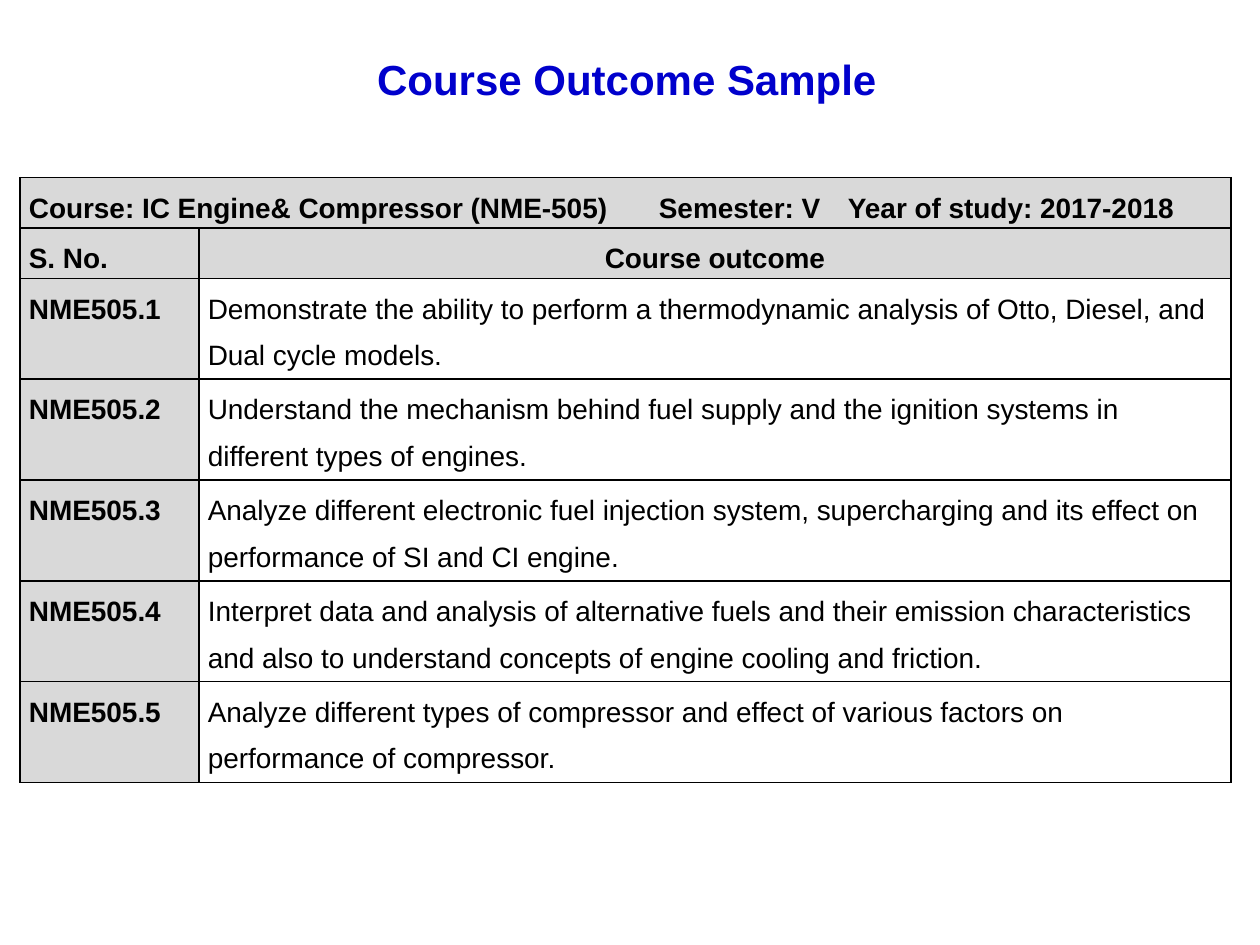
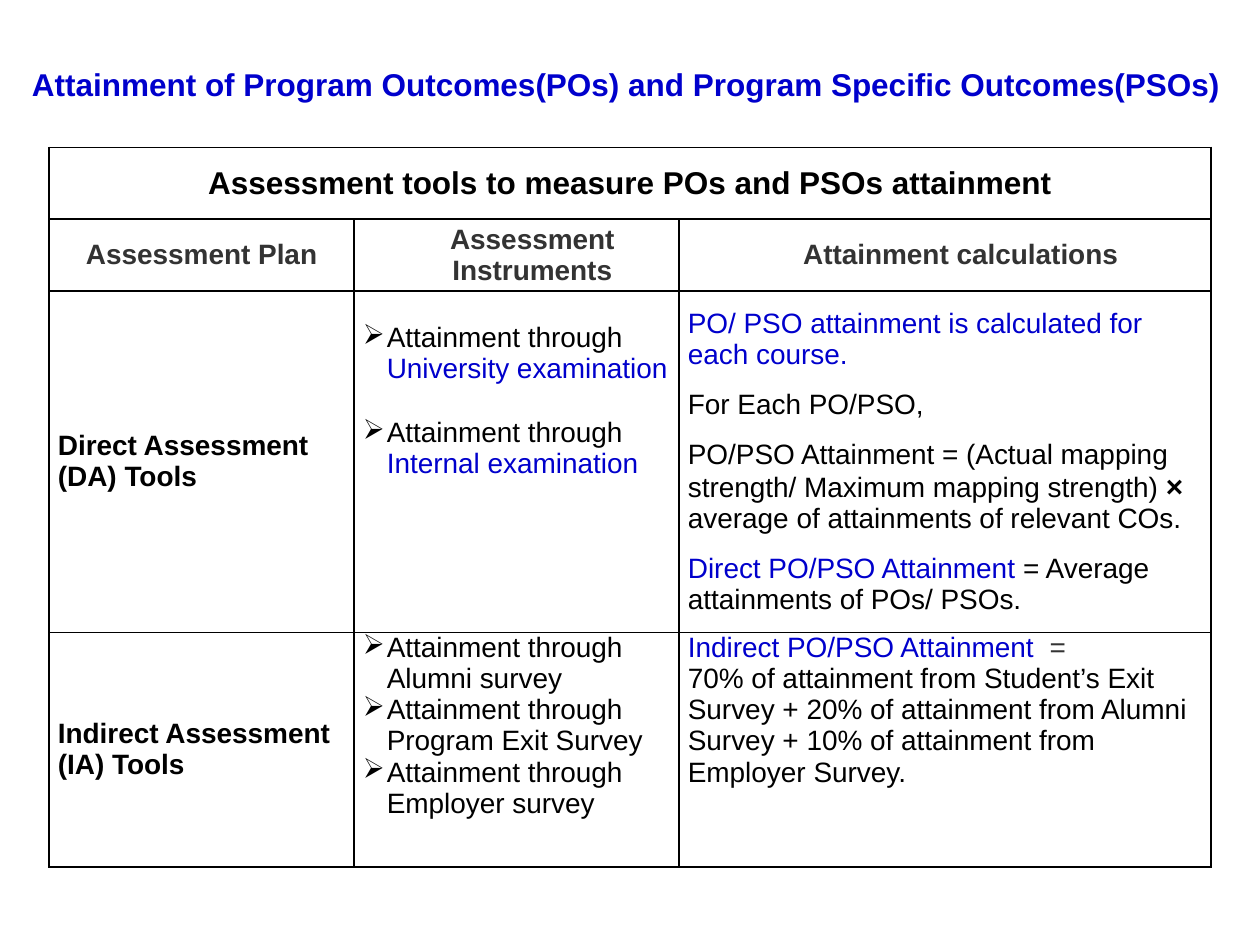
from lxml import etree
from pptx import Presentation
from pptx import util as u
from pptx.dml.color import RGBColor
from pptx.enum import text
from pptx.oxml import ns

BLUE, BLACK, CHARCOAL, GREY = "0000CC", "000000", "333333", "D9D9D9"
WIDTH, HEIGHT = u.Inches(10), u.Inches(7.5)
BODY = {"name": "Arial", "size": u.Pt(16), "bold": False}
CENTER = {"alignment": text.PP_ALIGN.CENTER}
MIDDLE = text.MSO_ANCHOR.MIDDLE
TOP = text.MSO_ANCHOR.TOP


def color(value):
    return RGBColor.from_string(value)


def area(left, top, width, height):
    """Turn percentages of the slide's size into lengths."""
    return [round(side * share / 100) for side, share in
            zip((WIDTH, HEIGHT, WIDTH, HEIGHT), (left, top, width, height))]


def set_attributes(target, values):
    for name, value in values.items():
        setattr(target, name, value)


def sub(parent, tag, **attributes):
    return etree.SubElement(parent, ns.qn(tag), attributes)


# Text: a run is (words, colour, format); a paragraph is (runs, options)
def run(words, ink=BLACK, **changes):
    return words, ink, changes


def write_paragraph(paragraph, runs, bullet=None, indent=0, hanging=0,
                    tabs=(), **layout):
    properties = paragraph._p.get_or_add_pPr()
    properties.set("marL", str(u.Inches(indent)))
    properties.set("indent", str(-u.Inches(hanging)))
    if bullet:
        sub(properties, "a:buChar", char=bullet)
    if tabs:
        stops = sub(properties, "a:tabLst")
        for position in tabs:
            sub(stops, "a:tab", pos=str(u.Inches(position)), algn="l")
    set_attributes(paragraph, layout)
    for words, ink, changes in runs:
        piece = paragraph.add_run()
        piece.text = words
        set_attributes(piece.font, {**BODY, **changes})
        piece.font.color.rgb = color(ink)


def add_title(slide, words, size, box):
    title = slide.shapes.title
    set_attributes(title, dict(zip(("left", "top", "width", "height"), area(*box))))
    set_attributes(title.text_frame, {"word_wrap": True, "vertical_anchor": MIDDLE,
                                      "auto_size": text.MSO_AUTO_SIZE.NONE,
                                      "margin_top": 0, "margin_bottom": 0})
    write_paragraph(title.text_frame.paragraphs[0],
                    [run(words, BLUE, size=u.Pt(size), bold=True)], **CENTER)


# Tables
def add_borders(cell):
    properties = cell._tc.get_or_add_tcPr()
    for side in ("a:lnL", "a:lnR", "a:lnT", "a:lnB"):
        line = sub(properties, side, w=str(u.Pt(1)))
        sub(sub(line, "a:solidFill"), "a:srgbClr", val=BLACK)


def add_table(slide, box, columns, rows):
    """Add a bordered table whose first row is one wide cell."""
    frame = slide.shapes.add_table(len(rows), len(columns), *area(*box))
    table = frame.table
    set_attributes(table, {"first_row": False, "horz_banding": False})
    for column, width in zip(table.columns, columns):
        column.width = u.Inches(width)
    for row, height in zip(table.rows, rows):
        row.height = u.Inches(height)
    for cell in table.iter_cells():
        add_borders(cell)
        cell.fill.background()
    table.cell(0, 0).merge(table.cell(0, len(columns) - 1))
    return table


def fill_cell(cell, *paragraphs, fill=None, anchor=TOP, top=0):
    set_attributes(cell, {"margin_left": u.Inches(0.07), "margin_right": u.Inches(0.07),
                          "margin_top": u.Inches(top), "margin_bottom": 0,
                          "vertical_anchor": anchor})
    if fill:
        cell.fill.solid()
        cell.fill.fore_color.rgb = color(fill)
    frame = cell.text_frame
    for index, (runs, options) in enumerate(paragraphs):
        paragraph = frame.add_paragraph() if index else frame.paragraphs[0]
        write_paragraph(paragraph, runs, **options)


def bold_line(words, ink=BLACK, size=16, **options):
    return [run(words, ink, size=u.Pt(size), bold=True)], options


def arrow_item(*runs, **options):
    return runs, {"bullet": "➢", "indent": 0.19, "hanging": 0.19, **options}


# Slides
def build_course_outcomes(slide):
    outcomes = (
        "Demonstrate the ability to perform a thermodynamic analysis of Otto, "
        "Diesel, and Dual cycle models.",
        "Understand the mechanism behind fuel supply and the ignition systems in "
        "different types of engines.",
        "Analyze different electronic fuel injection system, supercharging and its "
        "effect on performance of SI and CI engine.",
        "Interpret data and analysis of alternative fuels and their emission "
        "characteristics and also to understand concepts of engine cooling and friction.",
        "Analyze different types of compressor and effect of various factors on "
        "performance of compressor.",
    )
    spacing = {"line_spacing": 1.5}
    table = add_table(slide, (1.6, 18.8, 96.1, 64), (1.42, 8.19),
                      [0.4] * 2 + [0.8] * len(outcomes))
    add_title(slide, "Course Outcome Sample", 24, (4.5, 4.13, 90.5, 8.4))

    course = "Course: IC Engine& Compressor (NME-505)\tSemester: V\tYear of study: 2017-2018"
    fill_cell(table.cell(0, 0), bold_line(course, tabs=(4.9, 6.55), **spacing), fill=GREY)
    fill_cell(table.cell(1, 0), bold_line("S. No.", **spacing), fill=GREY)
    fill_cell(table.cell(1, 1), bold_line("Course outcome", **CENTER, **spacing), fill=GREY)
    for number, outcome in enumerate(outcomes, 1):
        fill_cell(table.cell(number + 1, 0), bold_line(f"NME505.{number}", **spacing),
                  fill=GREY)
        fill_cell(table.cell(number + 1, 1), ([run(outcome)], spacing))


def build_assessment_tools(slide):
    add_title(slide, "Attainment of Program Outcomes(POs) and Program Specific Outcomes(PSOs)",
              18, (0.1, 6.13, 99.2, 5.4))
    table = add_table(slide, (3.9, 15.6, 92.2, 76), (2.42, 2.58, 4.22),
                      (0.57, 0.57, 2.71, 1.86))

    # Headings
    fill_cell(table.cell(0, 0),
              bold_line("Assessment tools to measure POs and PSOs attainment", size=18, **CENTER),
              anchor=MIDDLE)
    headings = (("Assessment Plan", 0), ("Assessment Instruments", 0.25),
                ("Attainment calculations", 0.25))
    for column, (heading, indent) in enumerate(headings):
        fill_cell(table.cell(1, column),
                  bold_line(heading, CHARCOAL, indent=indent, **CENTER), anchor=MIDDLE)
    for row, plan in enumerate(("Direct Assessment (DA) Tools",
                                "Indirect Assessment (IA) Tools"), 2):
        fill_cell(table.cell(row, 0), bold_line(plan), anchor=MIDDLE)

    # Direct assessment
    through = "Attainment through "
    fill_cell(table.cell(2, 1),
              arrow_item(run(through), run("University examination", BLUE),
                         space_after=u.Pt(18.4)),
              arrow_item(run(through), run("Internal examination", BLUE)), top=0.25)
    calculations = (
        [run("PO/ PSO attainment is calculated for each course.", BLUE)],
        [run("For Each PO/PSO,")],
        [run("PO/PSO Attainment = (Actual mapping strength/ Maximum mapping strength) "),
         run("×", size=u.Pt(17), bold=True),
         run(" average of attainments of relevant COs.")],
        [run("Direct PO/PSO Attainment ", BLUE), run("= Average attainments of POs/ PSOs.")],
    )
    fill_cell(table.cell(2, 2),
              *[(runs, {"space_after": u.Pt(10.8)}) for runs in calculations], anchor=MIDDLE)

    # Indirect assessment
    fill_cell(table.cell(3, 1), *[arrow_item(run(through + survey)) for survey in
                                  ("Alumni survey", "Program Exit Survey", "Employer survey")])
    fill_cell(table.cell(3, 2),
              ([run("Indirect PO/PSO Attainment ", BLUE), run(" =", CHARCOAL)], {}),
              ([run("70% of attainment from Student’s Exit Survey + 20% of attainment from "
                    "Alumni Survey + 10% of attainment from Employer Survey.")], {}))


def main():
    presentation = Presentation()
    set_attributes(presentation, {"slide_width": WIDTH, "slide_height": HEIGHT})
    title_only = presentation.slide_layouts[5]
    for build in (build_course_outcomes, build_assessment_tools):
        build(presentation.slides.add_slide(title_only))
    presentation.save("out.pptx")


if __name__ == "__main__":
    main()
